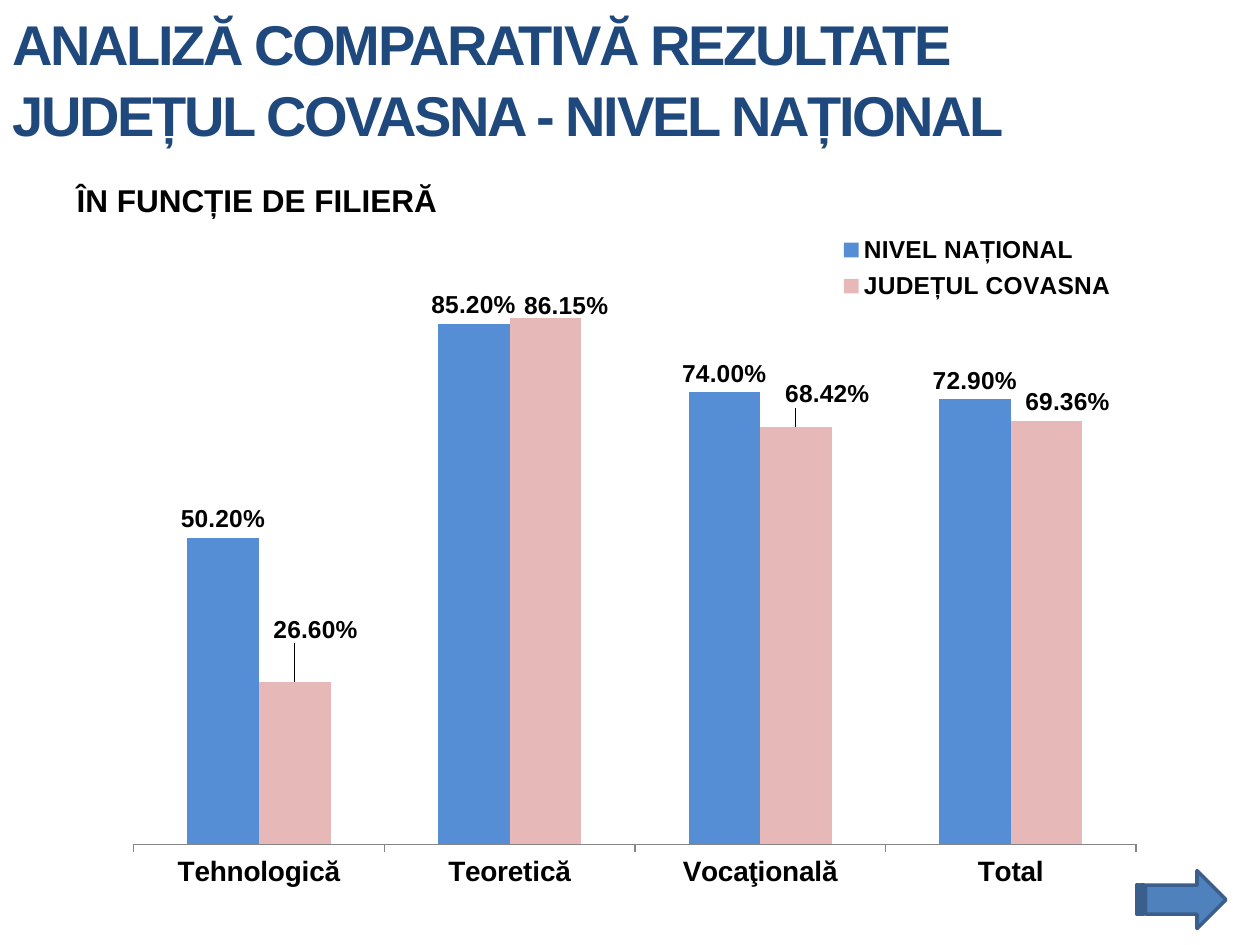
"""Build the slide comparing county and national results by education track."""
import pptx
import pptx.chart.data
import pptx.dml.color
import pptx.enum.chart
import pptx.enum.shapes
import pptx.enum.text
import pptx.oxml
import pptx.oxml.ns
import pptx.util
from pptx.util import Inches

TITLE = "ANALIZĂ COMPARATIVĂ REZULTATE\vJUDEȚUL COVASNA - NIVEL NAȚIONAL"
HEAD = "ÎN FUNCȚIE DE FILIERĂ"
TRACKS = ["Tehnologică", "Teoretică", "Vocaţională", "Total"]
ROWS = [
    ("NIVEL NAȚIONAL", [0.502, 0.852, 0.74, 0.729], "nation"),
    ("JUDEȚUL COVASNA", [0.266, 0.8615, 0.6842, 0.6936], "county"),
]
SHIFTS = [(0.02, -0.05), (0.02, 0.01), (0.03, -0.02), (0.02, 0)]
THEME = {
    "font": "Arial",
    "color": {"title": "1F497D", "text": "000000", "nation": "558ED5",
              "county": "E6B9B8", "arrow": "4F81BD", "edge": "3A5F8C", "axis": "868686"},
    "size": {"title": 32, "head": 18, "axis": 16, "label": 14, "chart": 11},
}
PERCENT = "0.00%"


def tint(name):
    return pptx.dml.color.RGBColor.from_string(THEME["color"][name])


def style(font, size, color="text", bold=True):
    font.name = THEME["font"]
    font.size = pptx.util.Pt(THEME["size"][size])
    font.bold = bold
    font.color.rgb = tint(color)


def paint(fill, color):
    fill.solid()
    fill.fore_color.rgb = tint(color)


def place(shape, left, top, width, height):
    shape.left, shape.top = Inches(left), Inches(top)
    shape.width, shape.height = Inches(width), Inches(height)


def layout(target="", **sides):
    parts = [f'<c:{key} val="{val}"/>' for key, val in sides.items()]
    return pptx.oxml.parse_xml(
        f'<c:layout {pptx.oxml.ns.nsdecls("c")}><c:manualLayout>{target}'
        f'{"".join(parts)}</c:manualLayout></c:layout>')


def set_layout(parent, after, node):
    for old in parent.xpath("c:layout"):
        parent.remove(old)
    if after is None:
        parent.insert(0, node)
    else:
        after.addnext(node)


def add_title(slide):
    title = slide.shapes.title
    place(title, 0, 0.02, 10, 1.17)
    frame = title.text_frame
    frame.text = TITLE
    frame.vertical_anchor = pptx.enum.text.MSO_ANCHOR.MIDDLE
    para = frame.paragraphs[0]
    para.alignment = pptx.enum.text.PP_ALIGN.LEFT
    para.line_spacing = 1.06
    for run in para.runs:
        style(run.font, "title", "title")
        run.font._element.set("spc", "-140")


def add_head(slide):
    box = slide.shapes.add_textbox(Inches(0.51), Inches(1.39), Inches(3.15), Inches(0.4))
    frame = box.text_frame
    frame.word_wrap = True
    frame.text = HEAD
    style(frame.paragraphs[0].runs[0].font, "head")


def add_labels(series):
    labels = series.data_labels
    labels.show_value = True
    labels.number_format = PERCENT
    labels.number_format_is_linked = False
    labels.position = pptx.enum.chart.XL_LABEL_POSITION.OUTSIDE_END
    style(labels.font, "label")


def shift_labels(series):
    for index, (x, y) in enumerate(SHIFTS):
        label = series.points[index].data_label
        label.position = pptx.enum.chart.XL_LABEL_POSITION.OUTSIDE_END
        style(label.font, "label")
        node = series._element.xpath(f"c:dLbls/c:dLbl[c:idx/@val='{index}']")[0]
        node.insert(1, layout(x=x, y=y))
        node.insert(2, pptx.oxml.parse_xml(
            f'<c:numFmt {pptx.oxml.ns.nsdecls("c")} formatCode="{PERCENT}" sourceLinked="0"/>'))


def add_chart(slide):
    data = pptx.chart.data.CategoryChartData(number_format=PERCENT)
    data.categories = TRACKS
    for name, values, _ in ROWS:
        data.add_series(name, values)
    chart = slide.shapes.add_chart(
        pptx.enum.chart.XL_CHART_TYPE.COLUMN_CLUSTERED,
        Inches(0.91), Inches(1.7), Inches(8.35), Inches(5.35), data).chart
    chart.has_title = False
    style(chart.font, "chart", bold=False)

    plot = chart.plots[0]
    plot.gap_width, plot.overlap, plot.vary_by_categories = 150, 0, False
    for series, (_, _, color) in zip(plot.series, ROWS):
        paint(series.format.fill, color)
        add_labels(series)
    shift_labels(plot.series[1])

    axis = chart.category_axis
    axis.major_tick_mark = pptx.enum.chart.XL_TICK_MARK.OUTSIDE
    axis.format.line.color.rgb = tint("axis")
    style(axis.tick_labels.font, "axis")
    scale = chart.value_axis
    scale.minimum_scale, scale.maximum_scale = 0, 1
    scale.has_major_gridlines = False
    scale.visible = False

    chart.has_legend = True
    legend = chart.legend
    legend.position = pptx.enum.chart.XL_LEGEND_POSITION.RIGHT
    legend.include_in_layout = False
    style(legend.font, "label")
    edge = {"xMode": "edge", "yMode": "edge"}
    root = legend._element
    set_layout(root, root.xpath("c:legendPos")[0],
               layout(**edge, x=0.68, y=0.02, w=0.28, h=0.12))
    area = chart._chartSpace.xpath("c:chart/c:plotArea")[0]
    set_layout(area, None, layout('<c:layoutTarget val="inner"/>', **edge,
                                  x=0.018, y=0.029, w=0.953, h=0.906))


def add_arrow(slide):
    arrow = slide.shapes.add_shape(
        pptx.enum.shapes.MSO_SHAPE.STRIPED_RIGHT_ARROW,
        Inches(9.02), Inches(6.91), Inches(0.71), Inches(0.46))
    arrow.shadow.inherit = False
    paint(arrow.fill, "arrow")
    arrow.line.color.rgb = tint("edge")
    arrow.line.width = pptx.util.Pt(2)


def main():
    deck = pptx.Presentation()
    deck.slide_width, deck.slide_height = Inches(10), Inches(7.5)
    slide = deck.slides.add_slide(deck.slide_layouts[5])
    add_title(slide)
    add_chart(slide)
    add_head(slide)
    add_arrow(slide)
    deck.save("out.pptx")


if __name__ == "__main__":
    main()
